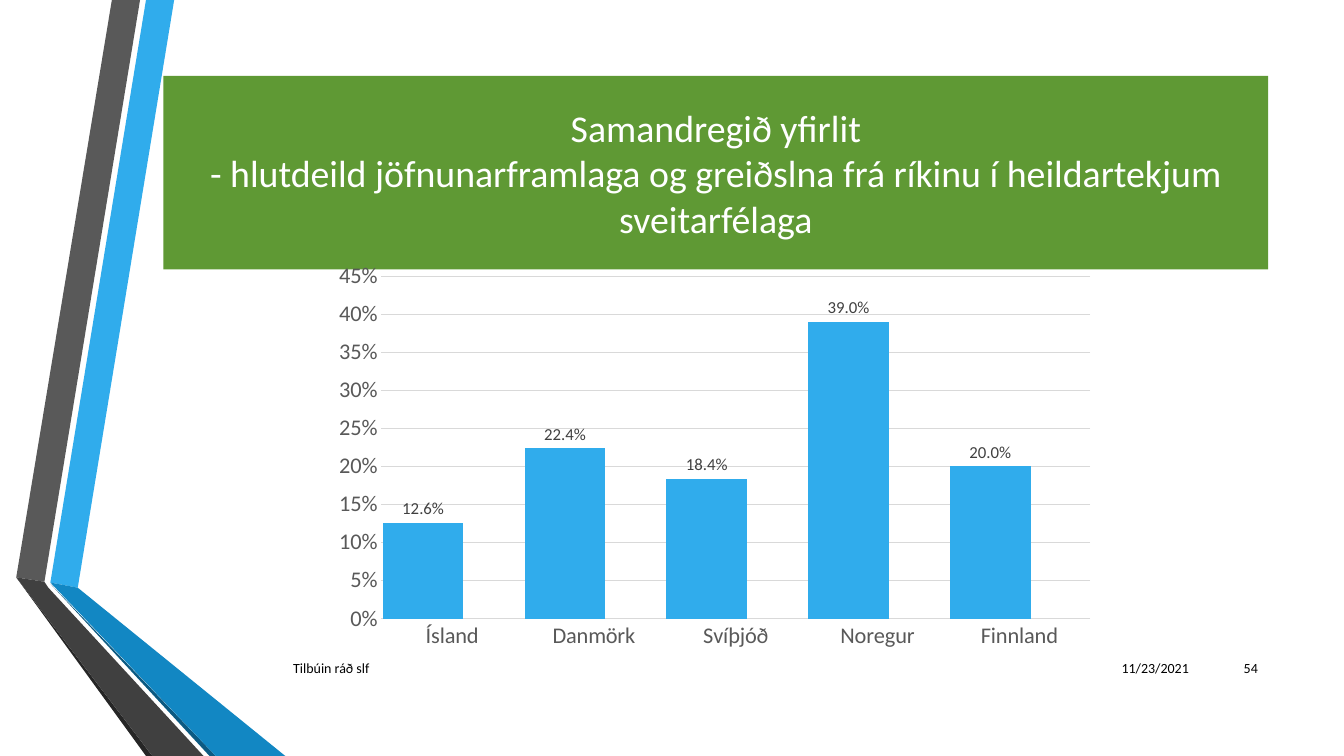
from dataclasses import dataclass

from pptx import Presentation
from pptx.chart.data import CategoryChartData
from pptx.dml.color import RGBColor
from pptx.enum.chart import XL_CHART_TYPE, XL_LABEL_POSITION, XL_TICK_MARK
from pptx.enum.text import MSO_ANCHOR, MSO_AUTO_SIZE, PP_ALIGN
from pptx.oxml import parse_xml
from pptx.oxml.ns import nsdecls, qn
from pptx.util import Cm, Pt


@dataclass(frozen=True)
class Theme:
    font: str = "Calibri"
    white: str = "FFFFFF"
    black: str = "000000"
    banner: str = "5F9934"
    blue: str = "30ACEC"
    blue_mid: str = "1287C3"
    blue_dark: str = "0C5A82"
    grey: str = "595959"
    grey_mid: str = "404040"
    grey_dark: str = "262626"
    grid: str = "D9D9D9"
    series: tuple = ("30ACEC", "80C34F", "E29D3E")
    title_size: int = 27
    axis_size: int = 16
    label_size: int = 12
    footer_size: int = 10


THEME = Theme()
SLIDE_W, SLIDE_H = 33.87, 19.05

# Ribbon outlines in centimetres, from back to front
RIBBONS = [
    (THEME.blue, [(1.27, 14.68), (1.96, 14.81), (4.39, 0), (3.68, 0)]),
    (THEME.grey, [(3.53, 0), (2.82, 0), (0.41, 14.55), (1.12, 14.66)]),
    (THEME.grey_dark, [(0.41, 14.55), (3.68, SLIDE_H), (3.84, SLIDE_H)]),
    (THEME.blue_dark, [(1.27, 14.71), (5.28, SLIDE_H), (5.44, SLIDE_H)]),
    (THEME.blue_mid, [(1.27, 14.68), (5.44, SLIDE_H), (7.19, SLIDE_H), (1.96, 14.81)]),
    (THEME.grey_mid, [(0.41, 14.55), (3.84, SLIDE_H), (5.13, SLIDE_H),
                      (1.22, 14.81), (1.12, 14.66)]),
]

SHARES = {"Ísland": 0.126, "Danmörk": 0.224, "Svíþjóð": 0.184,
          "Noregur": 0.39, "Finnland": 0.2}


def rgb(color):
    return RGBColor.from_string(color)


def format_font(font, size, color):
    font.name = THEME.font
    font.size = Pt(size)
    font.color.rgb = rgb(color)


def write_text(sp, text, size, color=THEME.black, align=PP_ALIGN.LEFT):
    tf = sp.text_frame
    tf.word_wrap = True
    tf.auto_size = MSO_AUTO_SIZE.NONE
    tf.vertical_anchor = MSO_ANCHOR.MIDDLE
    p = tf.paragraphs[0]
    p.text = text
    p.alignment = align
    for r in p.runs:
        format_font(r.font, size, color)


def add_ribbon(s, color, points):
    (x, y), *rest = [(Cm(px), Cm(py)) for px, py in points]
    builder = s.shapes.build_freeform(x, y)
    builder.add_line_segments(rest, close=True)
    sp = builder.convert_to_shape()
    sp.shadow.inherit = False
    sp.fill.solid()
    sp.fill.fore_color.rgb = rgb(color)
    sp.line.fill.background()


def add_title(s, text):
    sp = s.shapes.title
    sp.left, sp.top, sp.width, sp.height = Cm(4.12), Cm(1.91), Cm(27.84), Cm(4.88)
    sp.fill.solid()
    sp.fill.fore_color.rgb = rgb(THEME.banner)
    write_text(sp, text, THEME.title_size, color=THEME.white, align=PP_ALIGN.CENTER)


def add_footer(s, left, width, text, align=PP_ALIGN.LEFT):
    sp = s.shapes.add_textbox(Cm(left), Cm(16.33), Cm(width), Cm(1.02))
    write_text(sp, text, THEME.footer_size, align=align)


def set_plot_layout(chart, **fractions):
    plot_area = chart._chartSpace.chart.plotArea
    for old in plot_area.findall(qn("c:layout")):
        plot_area.remove(old)
    sizes = "".join(f'<c:{key} val="{val}"/>' for key, val in fractions.items())
    plot_area.insert(0, parse_xml(
        f'<c:layout {nsdecls("c")}><c:manualLayout><c:layoutTarget val="inner"/>'
        f'<c:xMode val="edge"/><c:yMode val="edge"/>{sizes}'
        '</c:manualLayout></c:layout>'))


def format_axis(axis):
    axis.major_tick_mark = axis.minor_tick_mark = XL_TICK_MARK.NONE
    format_font(axis.tick_labels.font, THEME.axis_size, THEME.grey)


def format_line(line):
    line.color.rgb = rgb(THEME.grid)
    line.width = Pt(0.75)


def add_share_chart(s):
    data = CategoryChartData(number_format="0.0%")
    data.categories = list(SHARES)
    data.add_series("Series 1", list(SHARES.values()))
    # The empty series set the bar width and keep the bars left of the labels
    for name in ("Series 2", "Series 3"):
        data.add_series(name, [None] * len(SHARES))
    chart = s.shapes.add_chart(XL_CHART_TYPE.COLUMN_CLUSTERED, Cm(7.57), Cm(6.53),
                               Cm(20.19), Cm(10.08), data).chart
    chart.has_title = False
    chart.has_legend = False
    format_font(chart.font, THEME.footer_size, THEME.black)
    set_plot_layout(chart, x=0.101, y=0.043, w=0.885, h=0.856)

    # Bars and their labels
    plot = chart.plots[0]
    plot.vary_by_categories = False
    plot.gap_width, plot.overlap = 4, 64
    for series, color in zip(plot.series, THEME.series):
        series.format.fill.solid()
        series.format.fill.fore_color.rgb = rgb(color)
    labels = plot.series[0].data_labels
    labels.show_value = True
    labels.number_format, labels.number_format_is_linked = "0.0%", False
    labels.position = XL_LABEL_POSITION.OUTSIDE_END
    format_font(labels.font, THEME.label_size, THEME.grey_mid)

    # Axes
    format_axis(chart.category_axis)
    format_line(chart.category_axis.format.line)
    axis = chart.value_axis
    format_axis(axis)
    axis.minimum_scale, axis.maximum_scale, axis.major_unit = 0, 0.45, 0.05
    axis.tick_labels.number_format = "0%"
    axis.tick_labels.number_format_is_linked = False
    axis.format.line.fill.background()
    format_line(axis.major_gridlines.format.line)


def main():
    prs = Presentation()
    prs.slide_width, prs.slide_height = Cm(SLIDE_W), Cm(SLIDE_H)
    s = prs.slides.add_slide(prs.slide_layouts[5])

    # Side ribbons
    for color, points in RIBBONS:
        add_ribbon(s, color, points)

    # Title banner, footer line and chart
    add_title(s, "Samandregið yfirlit\v- hlutdeild jöfnunarframlaga og greiðslna "
                 "frá ríkinu í heildartekjum sveitarfélaga")
    add_footer(s, 27.03, 3.18, "11/23/2021", align=PP_ALIGN.RIGHT)
    add_footer(s, 7.14, 19.69, "Tilbúin ráð slf")
    add_footer(s, 30.43, 1.52, "54", align=PP_ALIGN.RIGHT)
    add_share_chart(s)

    prs.save("out.pptx")


if __name__ == "__main__":
    main()
